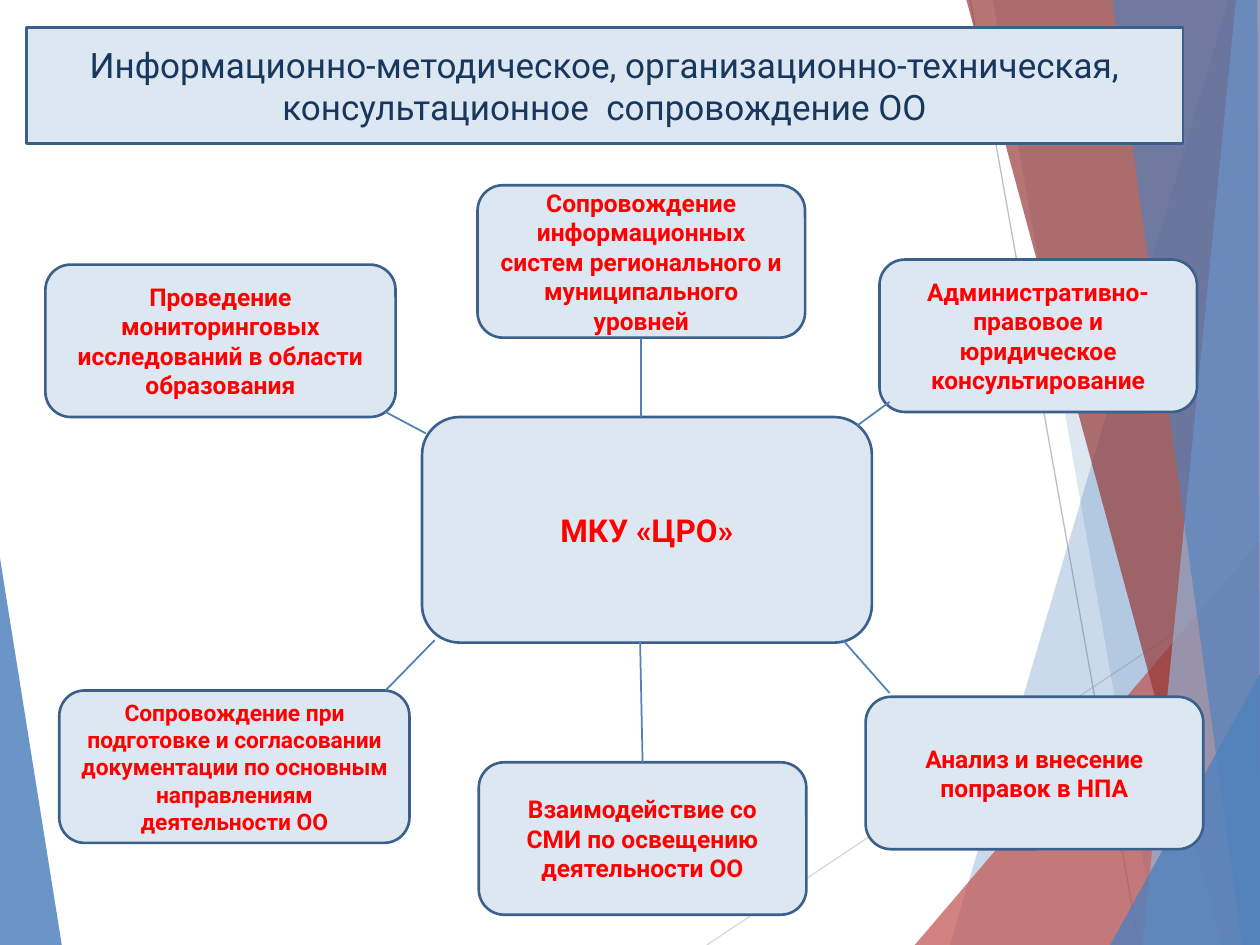
from lxml.etree import SubElement
from pptx import Presentation
from pptx.dml.color import RGBColor
from pptx.enum.shapes import MSO_CONNECTOR, MSO_SHAPE
from pptx.enum.text import MSO_ANCHOR, MSO_AUTO_SIZE, PP_ALIGN
from pptx.oxml.ns import qn
from pptx.util import Inches, Pt

COLS, ROWS = 100, 75
TOP, BOTTOM = 0, 2

# colour, opacity in percent, corner points as (column, row)
FACETS = [
    ("4F81BD", 84, [(0, 44.3), (4.9, 75), (0, 75)]),
    ("4F81BD", 29, [(97.5, 0), (75.4, 75), (100, 75), (100, 0)]),
    ("4F81BD", 19, [(78.8, 0), (91.9, 75), (100, 75), (100, 0)]),
    ("C0504D", 71, [(72.6, 75), (100, 42.9), (100, 75)]),
    ("963634", 69, [(76.7, 0), (97, 75), (100, 75), (100, 0)]),
    ("96B4D8", 69, [(98.1, 0), (90.7, 75), (100, 75), (100, 0)]),
    ("4F81BD", 64, [(88.3, 0), (98.6, 75), (100, 75), (99.8, 0)]),
    ("4F81BD", 79, [(88.1, 75), (100, 53.5), (100, 75)]),
]
RAYS = [((56.1, 75), (100, 45.7), "D8D8D8"), ((77, 0), (90.4, 75), "BFBFBF")]

TITLE = ("Информационно-методическое, организационно-техническая, "
         "консультационное  сопровождение ОО")
CENTRE = ("МКУ «ЦРО»", (33.5, 33.1, 35.7, 17.9))

# text, (left, top, width), font size, link start at topic, link end at centre,
# side of the topic joined at its middle
TOPICS = [
    ("Сопровождение информационных систем регионального и муниципального уровней",
     (37.9, 14.7, 26), 14, (50.9, 26.8), (50.9, 33.1), BOTTOM),
    ("Административно-правовое и юридическое консультирование",
     (69.8, 20.6, 25.2), 14, (70.6, 31.9), (68, 33.8), None),
    ("Анализ и внесение поправок в НПА",
     (68.7, 55.3, 26.8), 14, (70.6, 55), (66.9, 50.8), None),
    ("Сопровождение при подготовке и согласовании документации по основным "
     "направлениям деятельности ОО",
     (4.7, 54.8, 27.8), 13, (30.6, 54.8), (34.5, 50.8), None),
    ("Проведение мониторинговых исследований в области образования",
     (3.6, 21, 27.8), 14, (30.6, 32.7), (33.8, 34.4), None),
    ("Взаимодействие со СМИ по освещению деятельности ОО",
     (38, 60.5, 26), 14, (50.9, 60.5), (50.8, 50.9), TOP),
]
TOPIC_HEIGHT = 12.1


def rgb(value):
    return RGBColor.from_string(value)


class Deck:
    """Style and current slide; lengths are columns and rows of the grid."""
    font, panel, border = "Roboto", "DCE7F1", "3B608C"
    accent, title_ink, link = "FF0000", "17375E", "4F81BD"

    def __init__(self):
        self.prs = Presentation()
        self.prs.slide_width, self.prs.slide_height = Inches(10), Inches(7.5)
        self.s = self.prs.slides.add_slide(self.prs.slide_layouts[5])

    def x(self, cols):
        return round(self.prs.slide_width * cols / COLS)

    def y(self, rows):
        return round(self.prs.slide_height * rows / ROWS)

    def frame(self, box):
        left, top, width, height = box
        return self.x(left), self.y(top), self.x(width), self.y(height)

    def facet(self, color, opacity, points):
        corners = [(self.x(c), self.y(r)) for c, r in points]
        builder = self.s.shapes.build_freeform(*corners[0])
        builder.add_line_segments(corners[1:], close=True)
        sp = builder.convert_to_shape()
        sp.shadow.inherit = False
        sp.line.fill.background()
        sp.fill.solid()
        sp.fill.fore_color.rgb = rgb(color)
        clr = next(sp.element.spPr.iter(qn("a:srgbClr")))
        SubElement(clr, qn("a:alpha"), val=str(opacity * 1000))

    def line(self, start, end, color, width):
        cx = self.s.shapes.add_connector(
            MSO_CONNECTOR.STRAIGHT, self.x(start[0]), self.y(start[1]),
            self.x(end[0]), self.y(end[1]))
        cx.line.color.rgb = rgb(color)
        cx.line.width = Pt(width)
        SubElement(cx.element.spPr, qn("a:effectLst"))
        return cx

    def dress(self, sp, text, size, color, bold):
        """Give a box its panel look and its centred text."""
        sp.fill.solid()
        sp.fill.fore_color.rgb = rgb(self.panel)
        sp.line.color.rgb = rgb(self.border)
        sp.line.width = Pt(1.5)
        sp.shadow.inherit = False
        tf = sp.text_frame
        tf.text = text
        tf.word_wrap = True
        tf.auto_size = MSO_AUTO_SIZE.NONE
        tf.vertical_anchor = MSO_ANCHOR.MIDDLE
        p = tf.paragraphs[0]
        p.alignment = PP_ALIGN.CENTER
        font = p.runs[0].font
        font.name, font.size, font.bold = self.font, Pt(size), bold
        font.color.rgb = rgb(color)

    def title(self, text, box):
        sp = self.s.shapes.title
        sp.left, sp.top, sp.width, sp.height = self.frame(box)
        geom = SubElement(sp.element.spPr, qn("a:prstGeom"), prst="roundRect")
        SubElement(geom, qn("a:avLst"))
        self.dress(sp, text, 20, self.title_ink, False)
        # the placeholder comes first on the slide; lift it above the facets
        self.s.shapes.element.append(sp.element)

    def box(self, text, box, size):
        sp = self.s.shapes.add_shape(MSO_SHAPE.ROUNDED_RECTANGLE, *self.frame(box))
        self.dress(sp, text, size, self.accent, True)
        return sp


def main():
    deck = Deck()
    deck.facet(*FACETS[0])
    for start, end, color in RAYS:
        deck.line(start, end, color, 0.75)
    for facet in FACETS[1:]:
        deck.facet(*facet)

    deck.title(TITLE, (2.1, 2.2, 91.8, 9.2))
    deck.box(*CENTRE, 18)
    for text, place, size, start, end, side in TOPICS:
        topic = deck.box(text, (*place, TOPIC_HEIGHT), size)
        link = deck.line(start, end, deck.link, 1)
        if side is not None:
            link.begin_connect(topic, side)
    deck.prs.save("out.pptx")


if __name__ == "__main__":
    main()
